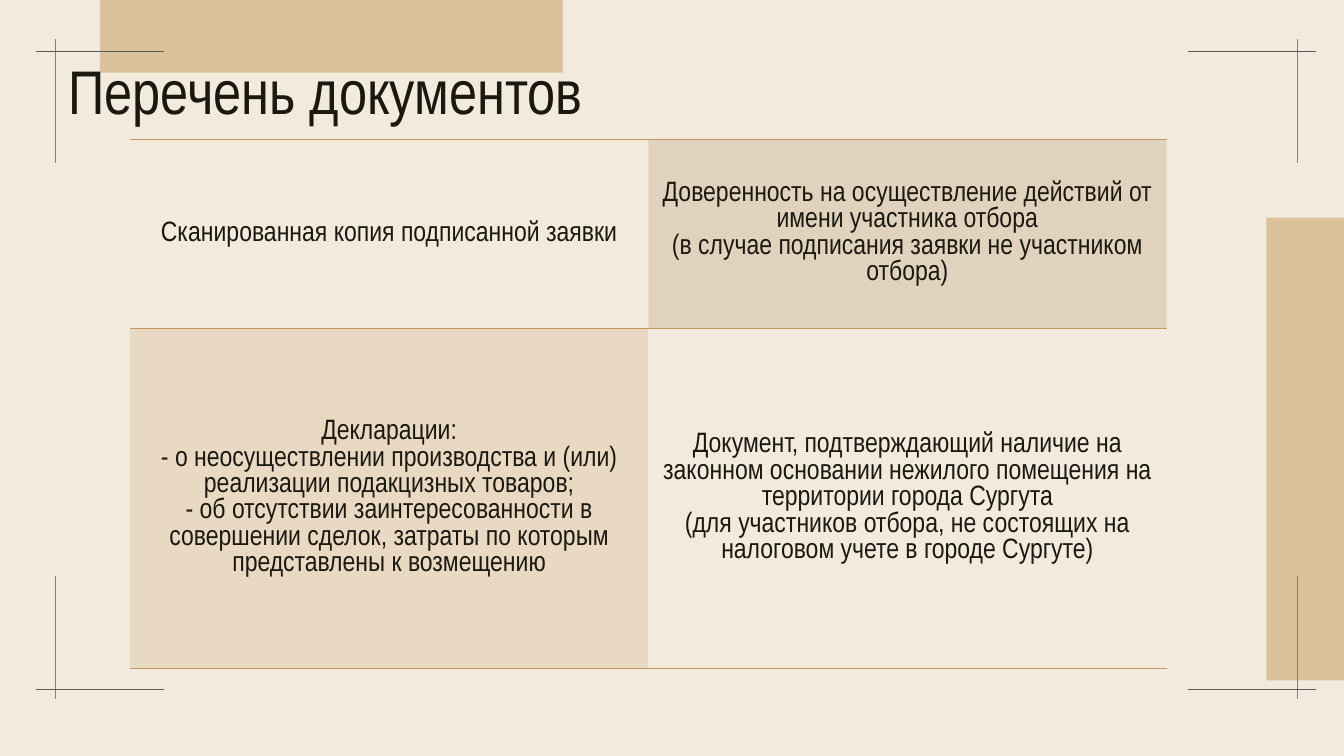
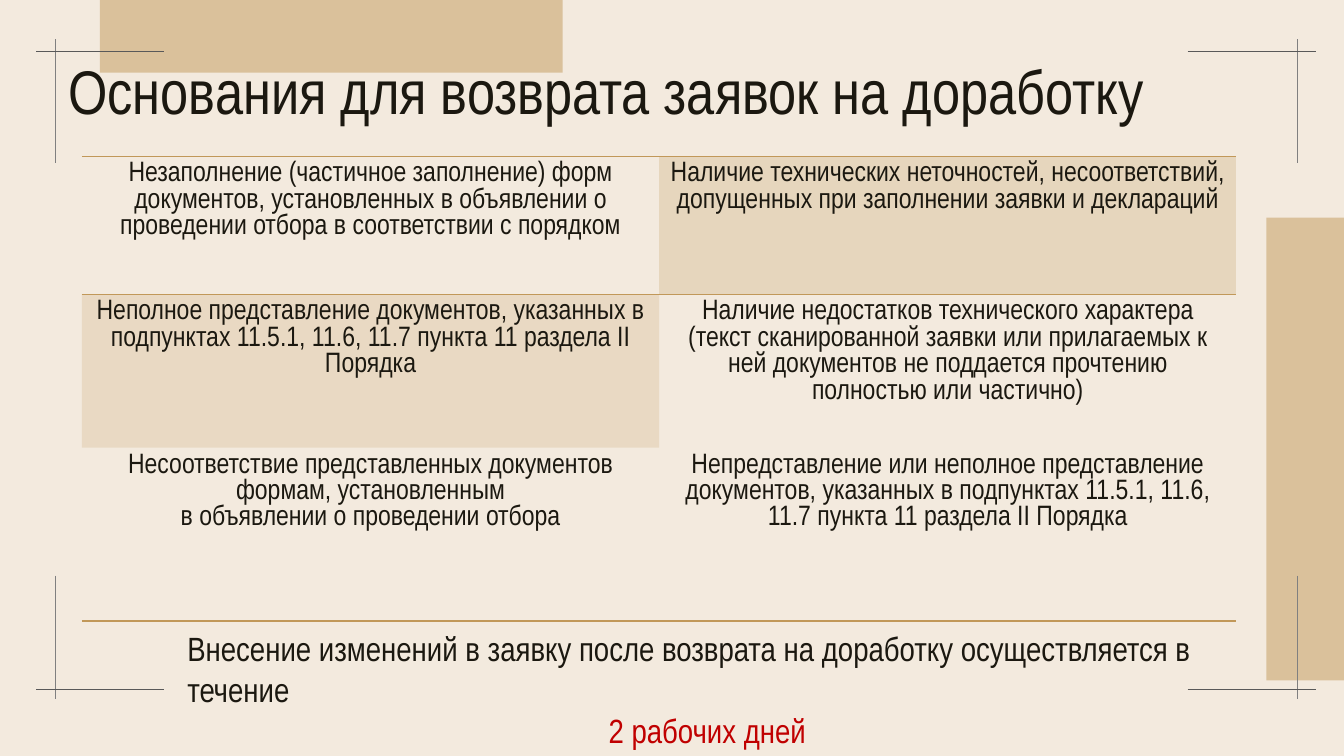
"""Two slides on grant application documents and grounds for returning them."""
from lxml.etree import SubElement
from pptx import Presentation
from pptx.dml.color import RGBColor
from pptx.enum.shapes import MSO_CONNECTOR, MSO_SHAPE
from pptx.enum.text import MSO_ANCHOR, PP_ALIGN
from pptx.oxml import parse_xml
from pptx.oxml.ns import nsdecls, qn
from pptx.util import Inches, Pt

W, H = Inches(13.33), Inches(7.5)
FONT = "Arial Narrow"
PAPER, SAND, GOLD, BROWN = "F3EADE", "DAC19B", "C19859", "9A743A"
INK, RED, GREY, DARK = "1B1810", "C00000", "808080", "595959"
NO_GRID = "{2D5ABB26-0587-4C30-8999-92F81FD0307C}"
TITLE = {"size": Pt(44), "spacing": 0.9}
CELL = {"size": Pt(20), "spacing": Pt(18.9), "align": PP_ALIGN.CENTER}
NOTE = {"size": Pt(24), "spacing": Pt(29.3)}


def rgb(color):
    """Turn a hex string into a colour."""
    return RGBColor.from_string(color)


def place(x, y, w, h):
    """Turn percentages of the slide into a left, top, width, height box."""
    return tuple(round(v * side / 100) for v, side in zip((x, y, w, h), (W, H, W, H)))


def paint(fill, color, alpha=100):
    """Fill with a solid colour, see-through if alpha is below 100."""
    fill.solid()
    fill.fore_color.rgb = rgb(color)
    if alpha < 100:
        clr = fill._xPr.find(qn("a:solidFill"))[0]
        SubElement(clr, qn("a:alpha")).set("val", str(alpha * 1000))


def write(tf, lines, fmt):
    """Write lines as paragraphs in one format."""
    for i, line in enumerate(lines):
        p = tf.paragraphs[0] if i == 0 else tf.add_paragraph()
        p.alignment = fmt.get("align", PP_ALIGN.LEFT)
        p.line_spacing = fmt["spacing"]
        r = p.add_run()
        r.text = line
        for name, value in {"name": FONT, "size": fmt["size"]}.items():
            setattr(r.font, name, value)
        r.font.color.rgb = rgb(fmt.get("color", INK))


def add_text(s, box, lines, fmt, anchor=MSO_ANCHOR.TOP):
    """Add a wrapped text box and return its frame."""
    tf = s.shapes.add_textbox(*box).text_frame
    tf.word_wrap = True
    tf.vertical_anchor = anchor
    write(tf, lines, fmt)
    return tf


def add_band(s, box):
    """Add a plain sand-coloured band."""
    sp = s.shapes.add_shape(MSO_SHAPE.RECTANGLE, *box)
    sp.shadow.inherit = False
    paint(sp.fill, SAND)
    sp.line.fill.background()


def add_line(s, box, color):
    """Add a thin line across a box of no width or no height."""
    x, y, w, h = box
    ln = s.shapes.add_connector(MSO_CONNECTOR.STRAIGHT, x, y, x + w, y + h)
    ln.line.width = Pt(1)
    ln.line.color.rgb = rgb(color)
    SubElement(ln._element.spPr, qn("a:effectLst"))


def add_frame(s):
    """Add the bands and the crossed lines in the four corners."""
    add_band(s, place(94.22, 28.8, 5.78, 61.2))
    add_band(s, place(7.43, 0, 34.43, 9.6))
    for upright_x, level_x in ((4.13, 2.7), (96.55, 88.37)):
        for upright_y, level_y in ((5.2, 6.8), (76.13, 91.2)):
            add_line(s, place(upright_x, upright_y, 0, 16.4), GREY)
            add_line(s, place(level_x, level_y, 9.53, 0), DARK)


def add_rule(cell, side):
    """Draw a gold border on one side of a cell."""
    cell._tc.get_or_add_tcPr().insert(0, parse_xml(
        f'<a:{side} {nsdecls("a")} w="12700"><a:solidFill>'
        f'<a:srgbClr val="{GOLD}"/></a:solidFill></a:{side}>'))


def add_grid(s, box, weights, cells, ruled, anchor):
    """Add a two-column table with rows by weight and rules under some rows."""
    x, y, w, h = box
    tbl = s.shapes.add_table(len(weights), 2, x, y, w, h).table
    tbl.first_row = tbl.horz_banding = False
    tbl._tbl.tblPr.find(qn("a:tableStyleId")).text = NO_GRID
    for row, weight in zip(tbl.rows, weights):
        row.height = round(h * weight / sum(weights))
    for i, (text, fill) in enumerate(cells):
        row, col = divmod(i, 2)
        cell = tbl.cell(row, col)
        cell.vertical_anchor = anchor
        write(cell.text_frame, text.split("\n"), CELL)
        if fill:
            paint(cell.fill, *fill)
        else:
            cell.fill.background()
        if row in ruled:
            add_rule(cell, "lnB")
        if row == 0:
            add_rule(cell, "lnT")


def add_page(prs, title):
    """Add a slide with the shared background, frame and title."""
    s = prs.slides.add_slide(prs.slide_layouts[6])
    paint(s.background.fill, PAPER)
    add_frame(s)
    add_text(s, place(4.35, 6.67, 86.27, 11.73), [title], TITLE, MSO_ANCHOR.MIDDLE)
    return s


def documents(prs):
    """Build the slide listing the documents."""
    s = add_page(prs, "Перечень документов")
    cells = [
        ("Сканированная копия подписанной заявки", None),
        ("Доверенность на осуществление действий от имени участника отбора\n"
         "(в случае подписания заявки не участником отбора)", (BROWN, 20)),
        ("Декларации:\n"
         "- о неосуществлении производства и (или) реализации подакцизных товаров;\n"
         "- об отсутствии заинтересованности в совершении сделок, затраты по которым "
         "представлены к возмещению", (GOLD, 20)),
        ("Документ, подтверждающий наличие на законном основании нежилого помещения "
         "на территории города Сургута\n"
         "(для участников отбора, не состоящих на налоговом учете в городе Сургуте)",
         (PAPER,)),
    ]
    add_grid(s, place(9.68, 18.4, 77.12, 70), (1.88, 3.37), cells, (0, 1),
             MSO_ANCHOR.MIDDLE)


def returns(prs):
    """Build the slide on grounds for returning an application."""
    s = add_page(prs, "Основания для возврата заявок на доработку")
    clauses = ("документов, указанных в подпунктах 11.5.1, 11.6, 11.7 "
               "пункта 11 раздела II Порядка")
    cells = [
        ("Незаполнение (частичное заполнение) форм документов, установленных в "
         "объявлении о проведении отбора в соответствии с порядком", None),
        ("Наличие технических неточностей, несоответствий, допущенных при "
         "заполнении заявки и деклараций", ("E6D6BD",)),
        (f"Неполное представление {clauses}", (GOLD, 20)),
        ("Наличие недостатков технического характера (текст сканированной заявки "
         "или прилагаемых к ней документов не поддается прочтению полностью или "
         "частично)", (PAPER, 20)),
        ("Несоответствие представленных документов формам, установленным\n"
         "в объявлении о проведении отбора", None),
        (f"Непредставление или неполное представление {clauses}", (PAPER, 20)),
    ]
    add_grid(s, place(6.1, 20.67, 85.9, 61.47), (1.37, 1.52, 1.72), cells, (0, 2),
             MSO_ANCHOR.TOP)
    tf = add_text(s, place(13.2, 82.27, 78.84, 12.13),
                  ["Внесение изменений в заявку после возврата на доработку "
                   "осуществляется в течение", "2 рабочих дней"], NOTE)
    p = tf.paragraphs[1]
    p.alignment = PP_ALIGN.CENTER
    p.runs[0].font.color.rgb = rgb(RED)


def main():
    """Build and save the presentation."""
    prs = Presentation()
    prs.slide_width, prs.slide_height = W, H
    documents(prs)
    returns(prs)
    prs.save("out.pptx")


if __name__ == "__main__":
    main()
